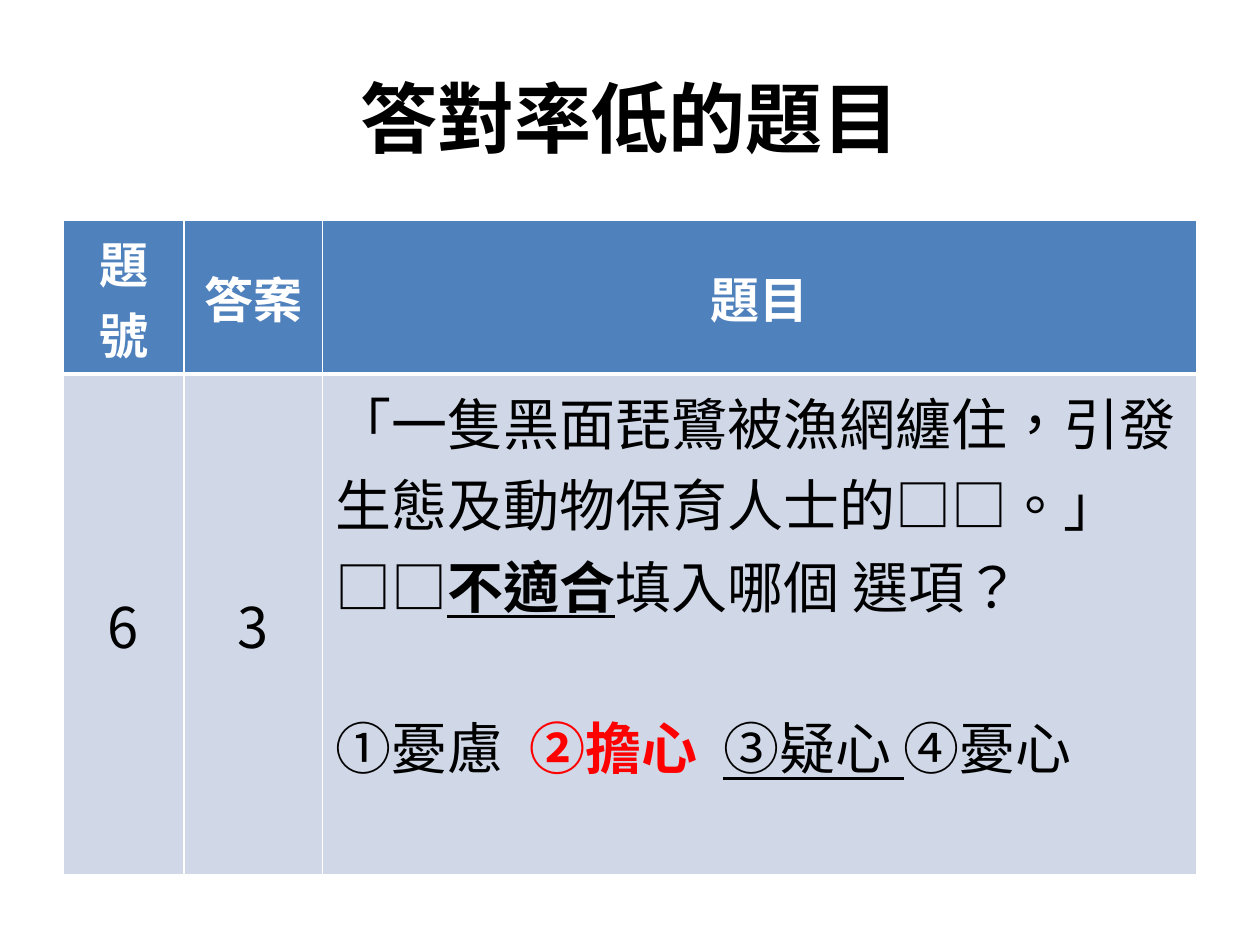
from lxml.etree import SubElement
from pptx import Presentation
from pptx.dml.color import RGBColor
from pptx.enum.text import MSO_ANCHOR, PP_ALIGN
from pptx.oxml.ns import qn
from pptx.util import Inches, Pt

COLORS = {
    "black": "000000",
    "white": "FFFFFF",
    "header": "4F81BD",
    "body": "D0D8E8",
    "answer": "FF0000",
}
CJK_FONT = "Noto Sans CJK SC"
TITLE = {"size": Pt(44), "name": CJK_FONT, "bold": True, "color": "black"}
HEADER = {"size": Pt(28), "name": "Calibri", "bold": True, "color": "white"}
BODY = {"size": Pt(32), "name": CJK_FONT, "bold": False, "color": "black"}

COLUMN_WIDTHS = [0.96, 1.1, 6.94]
ROW_HEIGHTS = [1.22, 3.97]
OPTION_STEP = 1.54

HEADINGS = ["題號", "答案", "題目"]
NUMBER, ANSWER = "6", "3"
QUESTION = [
    ("「一隻黑面琵鷺被漁網纏住，引發生態及動物保育人士的□□。」□□", {}),
    ("不適合", {"bold": True, "underline": True}),
    ("填入哪個 選項？", {}),
]
OPTIONS = [
    ("①憂慮\t", {}),
    ("②擔心\t", {"bold": True, "color": "answer"}),
    ("③疑心 ", {"underline": True}),
    ("④憂心", {}),
]


def rgb(name):
    return RGBColor.from_string(COLORS[name])


def add_spans(para, spans, base):
    for text, changes in spans:
        span = para.add_run()
        span.text = text
        for key, value in {**base, **changes}.items():
            if key == "color":
                span.font.color.rgb = rgb(value)
            else:
                setattr(span.font, key, value)
        properties = span._r.get_or_add_rPr()
        properties.set("lang", "zh-TW")
        SubElement(properties, qn("a:ea"), typeface=CJK_FONT)


def add_tab_stops(para, step, count):
    stops = SubElement(para._p.get_or_add_pPr(), qn("a:tabLst"))
    for index in range(1, count + 1):
        SubElement(stops, qn("a:tab"), pos=str(Inches(step * index)), algn="l")


def set_borders(cell, widths):
    properties = cell._tc.get_or_add_tcPr()
    for side, width in widths.items():
        line = SubElement(properties, qn(f"a:ln{side}"), w=str(Pt(width)))
        fill = SubElement(line, qn("a:solidFill"))
        SubElement(fill, qn("a:srgbClr"), val=COLORS["white"])


def style_cell(cell, is_header):
    top, bottom = (1, 3) if is_header else (3, 1)
    set_borders(cell, {"L": 1, "R": 1, "T": top, "B": bottom})
    cell.fill.solid()
    cell.fill.fore_color.rgb = rgb("header" if is_header else "body")


def fill_centered(cell, text, base):
    cell.vertical_anchor = MSO_ANCHOR.MIDDLE
    para = cell.text_frame.paragraphs[0]
    para.alignment = PP_ALIGN.CENTER
    add_spans(para, [(text, {})], base)


def fill_question(cell):
    frame = cell.text_frame
    add_spans(frame.paragraphs[0], QUESTION, BODY)
    para = frame.add_paragraph()
    para.space_before = Pt(46)
    add_tab_stops(para, OPTION_STEP, 2)
    add_spans(para, OPTIONS, BODY)


def add_title(page, text):
    box = page.shapes.add_textbox(Inches(0.5), Inches(0.3), Inches(9), Inches(1.25))
    frame = box.text_frame
    frame.word_wrap = True
    frame.vertical_anchor = MSO_ANCHOR.MIDDLE
    para = frame.paragraphs[0]
    para.alignment = PP_ALIGN.CENTER
    add_spans(para, [(text, {})], TITLE)


def add_question_table(page):
    table = page.shapes.add_table(
        len(ROW_HEIGHTS), len(COLUMN_WIDTHS),
        Inches(0.5), Inches(1.75), Inches(9), Inches(sum(ROW_HEIGHTS)),
    ).table
    for column, width in zip(table.columns, COLUMN_WIDTHS):
        column.width = Inches(width)
    for index, height in enumerate(ROW_HEIGHTS):
        table.rows[index].height = Inches(height)
        for cell in table.rows[index].cells:
            style_cell(cell, index == 0)
    for column, heading in enumerate(HEADINGS):
        fill_centered(table.cell(0, column), heading, HEADER)
    for column, text in enumerate([NUMBER, ANSWER]):
        fill_centered(table.cell(1, column), text, BODY)
    fill_question(table.cell(1, 2))


def main():
    deck = Presentation()
    deck.slide_width, deck.slide_height = Inches(10), Inches(7.5)
    page = deck.slides.add_slide(deck.slide_layouts[6])
    add_title(page, "答對率低的題目")
    add_question_table(page)
    deck.save("out.pptx")


if __name__ == "__main__":
    main()
